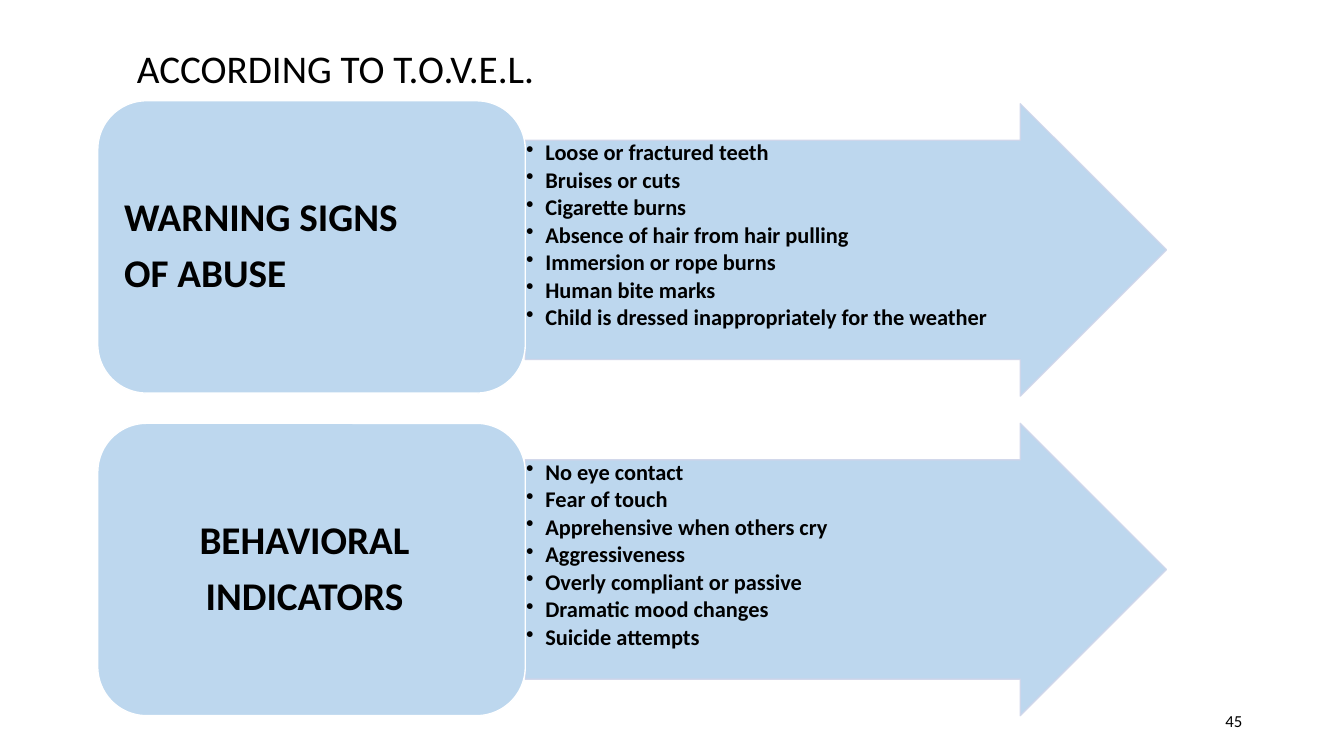
from dataclasses import dataclass

from lxml import etree
from pptx import Presentation
from pptx.dml.color import RGBColor
from pptx.enum import shapes, text
from pptx.oxml import ns
from pptx.util import Inches, Pt


@dataclass(frozen=True)
class Theme:
    font: str = "Calibri"
    ink: RGBColor = RGBColor.from_string("000000")
    panel: RGBColor = RGBColor.from_string("BDD7EE")
    panel_edge: RGBColor = RGBColor.from_string("FFFFFF")
    arrow_edge: RGBColor = RGBColor.from_string("CFD5EA")
    heading_size: int = 28
    item_size: int = 16
    number_size: int = 12


THEME = Theme()
LEFT = text.PP_ALIGN.LEFT
CENTER = text.PP_ALIGN.CENTER
RIGHT = text.PP_ALIGN.RIGHT
LABEL_LEFT, LABEL_WIDTH = 0.97, 4.24
ARROW_WIDTH, ROW_HEIGHT = 6.36, 2.9

# Arrow top, label top, label alignment, right inset, label lines, items
ROWS = [
    (1.03, 1.0, LEFT, 0.12, ["WARNING SIGNS", "OF ABUSE"], [
        "Loose or fractured teeth",
        "Bruises or cuts",
        "Cigarette burns",
        "Absence of hair from hair pulling",
        "Immersion or rope burns",
        "Human bite marks",
        "Child is dressed inappropriately for the weather",
    ]),
    (4.2, 4.2, CENTER, 0.26, ["BEHAVIORAL", "INDICATORS"], [
        "No eye contact",
        "Fear of touch",
        "Apprehensive when others cry",
        "Aggressiveness",
        "Overly compliant or passive",
        "Dramatic mood changes",
        "Suicide attempts",
    ]),
]


def write_lines(frame, lines, size, bold=False, align=LEFT, spacing=0.9, after=0):
    frame.word_wrap = True
    for index, line in enumerate(lines):
        para = frame.paragraphs[0] if index == 0 else frame.add_paragraph()
        para.alignment = align
        para.line_spacing = spacing
        para.space_before = Pt(0)
        para.space_after = Pt(after)
        span = para.add_run()
        span.text = line
        span.font.name = THEME.font
        span.font.size = Pt(size)
        span.font.bold = bold
        span.font.color.rgb = THEME.ink


def set_insets(frame, left, top, right, bottom):
    frame.margin_left, frame.margin_top = Inches(left), Inches(top)
    frame.margin_right, frame.margin_bottom = Inches(right), Inches(bottom)


def add_bullets(frame):
    for para in frame.paragraphs:
        props = para._p.get_or_add_pPr()
        props.set("marL", str(Inches(0.19)))
        props.set("indent", str(-Inches(0.19)))
        etree.SubElement(props, ns.qn("a:buChar"), char="•")


def add_text(page, left, top, width, height, line, size, align=LEFT, spacing=0.9):
    box = page.shapes.add_textbox(
        Inches(left), Inches(top), Inches(width), Inches(height))
    box.text_frame.vertical_anchor = text.MSO_ANCHOR.MIDDLE
    write_lines(box.text_frame, [line], size, align=align, spacing=spacing)


def add_panel(page, kind, left, top, width, edge):
    panel = page.shapes.add_shape(
        kind, Inches(left), Inches(top), Inches(width), Inches(ROW_HEIGHT))
    panel.shadow.inherit = False
    panel.fill.solid()
    panel.fill.fore_color.rgb = THEME.panel
    panel.line.color.rgb = edge
    panel.line.width = Pt(1)
    return panel


def add_arrow(page, top, items):
    arrow = add_panel(page, shapes.MSO_SHAPE.RIGHT_ARROW,
                      LABEL_LEFT + LABEL_WIDTH, top, ARROW_WIDTH, THEME.arrow_edge)
    arrow.adjustments[0], arrow.adjustments[1] = 0.75, 0.5
    edge_color = arrow._element.spPr.find(".//" + ns.qn("a:ln")).find(
        ".//" + ns.qn("a:srgbClr"))
    etree.SubElement(edge_color, ns.qn("a:alpha"), val="90000")
    frame = arrow.text_frame
    frame.vertical_anchor = text.MSO_ANCHOR.TOP
    set_insets(frame, 0.01, 0.01, 0.01, 0.01)
    write_lines(frame, items, THEME.item_size, bold=True, after=2.4)
    add_bullets(frame)


def add_label(page, top, lines, align, right_inset):
    label = add_panel(page, shapes.MSO_SHAPE.ROUNDED_RECTANGLE,
                      LABEL_LEFT, top, LABEL_WIDTH, THEME.panel_edge)
    frame = label.text_frame
    frame.vertical_anchor = text.MSO_ANCHOR.MIDDLE
    set_insets(frame, 0.12, 0.06, right_inset, 0.06)
    write_lines(frame, lines, THEME.heading_size, bold=True, align=align, after=9.8)


def main():
    deck = Presentation()
    deck.slide_width, deck.slide_height = Inches(13.33), Inches(7.5)
    page = deck.slides.add_slide(deck.slide_layouts[6])
    add_text(page, 1.26, 0.4, 7.97, 0.6, "ACCORDING TO T.O.V.E.L.", THEME.heading_size)
    for arrow_top, label_top, align, right_inset, lines, items in ROWS:
        add_arrow(page, arrow_top, items)
        add_label(page, label_top, lines, align, right_inset)
    add_text(page, 9.42, 6.95, 3, 0.4, "45", THEME.number_size, RIGHT, spacing=1.0)
    deck.save("out.pptx")


if __name__ == "__main__":
    main()
